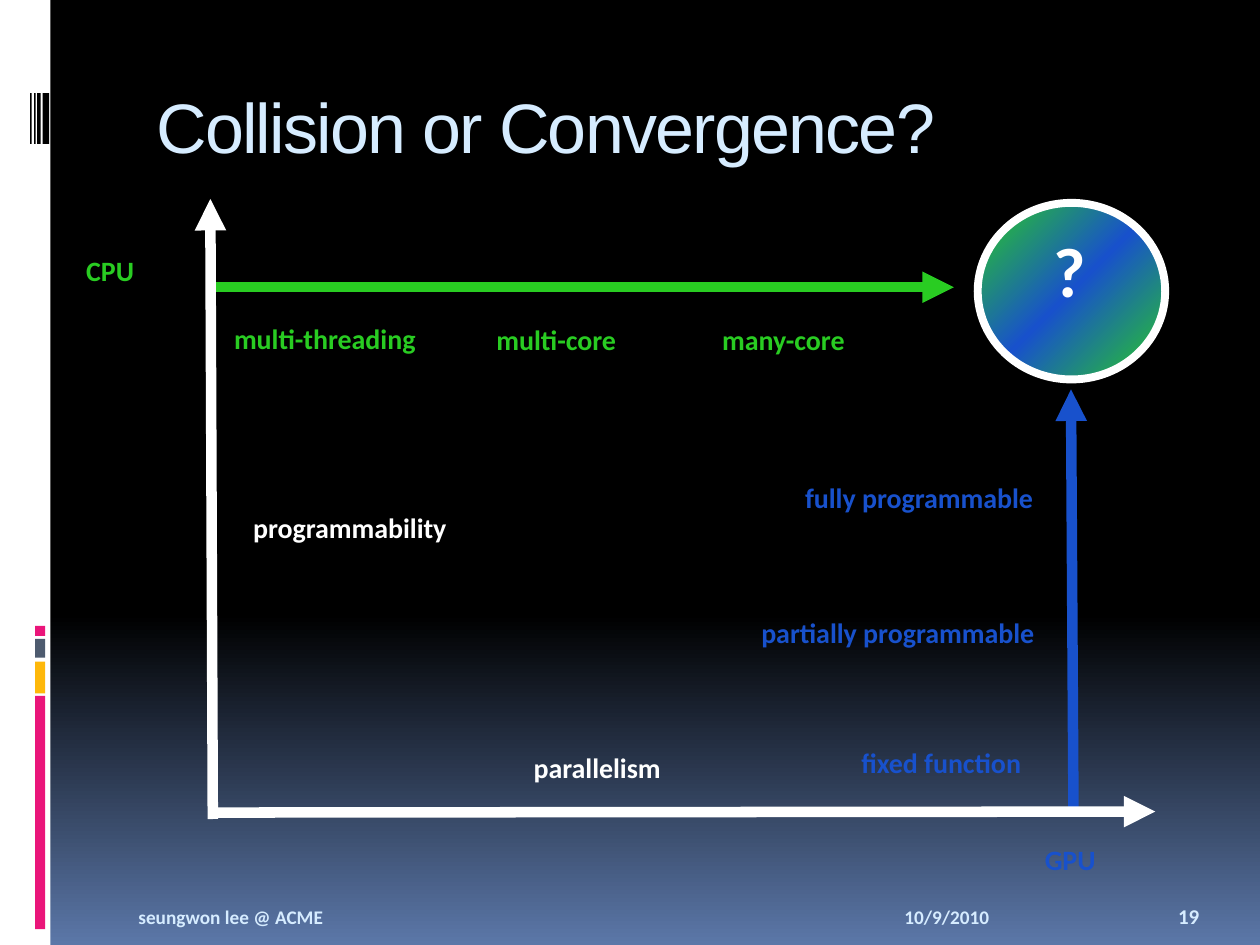
from lxml import etree
from pptx import Presentation
from pptx.dml.color import RGBColor
from pptx.enum import shapes, text
from pptx.oxml import ns
from pptx.util import Cm, Pt

WHITE = RGBColor(0xFF, 0xFF, 0xFF)
BLACK = RGBColor(0, 0, 0)
GREEN = RGBColor(0x29, 0xCC, 0x22)
BLUE = RGBColor(0x18, 0x51, 0xCC)
PALE = RGBColor(0xD6, 0xEC, 0xFF)
STEEL = RGBColor(0x5B, 0x77, 0xA8)
PINK = RGBColor(0xEA, 0x15, 0x7A)
GOLD = RGBColor(0xFE, 0xB8, 0x0A)
SLATE = RGBColor(0x4E, 0x5B, 0x6F)

# Lengths are in cm.
TITLE = " Collision or Convergence?"
STRIP = (0, 0, 1.02, 19.05, WHITE)
BLOCKS = [(12.62, 0.2, PINK), (12.88, 0.38, SLATE),
          (13.34, 0.64, GOLD), (14.03, 4.7, PINK)]  # top, height, colour
CODE = [(0.61, 0.03), (0.69, 0.03), (0.75, 0.07), (0.86, 0.13)]  # left, width
ARROWS = [  # start, end, colour
    ((4.24, 5.79), (19.23, 5.79), GREEN),
    ((4.29, 16.51), (4.24, 4.01), WHITE),
    ((21.64, 16.36), (21.59, 7.85), BLUE),
    ((4.39, 16.38), (23.29, 16.36), WHITE),
]
GOAL = (19.71, 4.09, 3.78, 3.56)
LABELS = [  # text, left, top, width, colour
    ("CPU", 1.42, 5.11, 1.6, GREEN),
    ("multi-threading", 4.34, 6.48, 4.42, GREEN),
    ("multi-core", 9.68, 6.5, 3.07, GREEN),
    ("many-core", 14.22, 6.5, 3.15, GREEN),
    ("fully programmable", 15.85, 9.7, 5.36, BLUE),
    ("partially programmable", 14.94, 12.42, 6.32, BLUE),
    ("fixed function", 17.02, 15.04, 3.91, BLUE),
    ("GPU", 20.75, 17, 1.65, BLUE),
    ("programmability", 4.72, 10.29, 4.67, WHITE),
    ("parallelism", 10.44, 15.14, 3.2, WHITE),
]
FOOT = [  # text, left, width, size
    ("seungwon lee @ ACME", 2.54, 15.44, 11),
    ("10/9/2010", 17.98, 5.92, 11),
    ("19", 23.5, 1.7, 12),
]


def blend(fill, root, stops, angle):
    """Fill with a linear gradient of (percent, colour) stops."""
    fill.gradient()
    grad = root.find(".//" + ns.qn("a:gradFill"))
    for child in list(grad):
        grad.remove(child)
    row = etree.SubElement(grad, ns.qn("a:gsLst"))
    for pos, tone in stops:
        stop = etree.SubElement(row, ns.qn("a:gs"), pos=str(pos * 1000))
        etree.SubElement(stop, ns.qn("a:srgbClr"), val=str(tone))
    etree.SubElement(grad, ns.qn("a:lin"), ang=str(angle * 60000), scaled="0")


def add_bar(slide, x, y, w, h, tone):
    bar = slide.shapes.add_shape(shapes.MSO_SHAPE.RECTANGLE,
                                 Cm(x), Cm(y), Cm(w), Cm(h))
    bar.shadow.inherit = False
    bar.fill.solid()
    bar.fill.fore_color.rgb = tone
    bar.line.fill.background()


def add_arrow(slide, start, end, tone):
    arrow = slide.shapes.add_connector(shapes.MSO_CONNECTOR.STRAIGHT,
                                       *map(Cm, start + end))
    arrow.line.color.rgb = tone
    arrow.line.width = Pt(6)
    etree.SubElement(arrow.line._get_or_add_ln(), ns.qn("a:tailEnd"),
                     type="triangle")
    etree.SubElement(arrow._element.spPr, ns.qn("a:effectLst"))


def style(par, size, tone, face="Calibri", bold=True):
    par.font.size = Pt(size)
    par.font.name = face
    par.font.bold = bold
    par.font.color.rgb = tone


def add_text(slide, words, x, y, w, h, size, tone):
    frame = slide.shapes.add_textbox(Cm(x), Cm(y), Cm(w), Cm(h)).text_frame
    frame.text = words
    style(frame.paragraphs[0], size, tone)
    return frame


def add_label(slide, words, x, y, w, tone, h=0.81, size=16):
    frame = add_text(slide, words, x, y, w, h, size, tone)
    frame.word_wrap = False
    frame.auto_size = text.MSO_AUTO_SIZE.SHAPE_TO_FIT_TEXT
    frame.paragraphs[0].alignment = text.PP_ALIGN.CENTER
    frame.paragraphs[0].line_spacing = 0.8


def set_title(slide):
    title = slide.shapes.title
    title.left, title.top, title.width, title.height = map(
        Cm, (2.54, 1.42, 21.59, 2.54))
    frame = title.text_frame
    frame.text = TITLE
    frame.vertical_anchor = text.MSO_ANCHOR.TOP
    frame.margin_top = Cm(0.27)
    par = frame.paragraphs[0]
    par.alignment = text.PP_ALIGN.LEFT
    style(par, 40, PALE, "Arial", False)
    par.runs[0].font._element.set("spc", "-100")


def add_goal(slide):
    goal = slide.shapes.add_shape(shapes.MSO_SHAPE.OVAL, *map(Cm, GOAL))
    goal.shadow.inherit = False
    blend(goal.fill, goal._element.spPr,
          [(0, GREEN), (50, BLUE), (100, GREEN)], 45)
    goal.line.color.rgb = WHITE
    goal.line.width = Pt(4.5)
    add_label(slide, "?", 20.98, 4.78, 1.14, WHITE, 1.63, 40)


def main():
    deck = Presentation()
    deck.slide_width, deck.slide_height = Cm(25.4), Cm(19.05)
    slide = deck.slides.add_slide(deck.slide_layouts[5])
    blend(slide.background.fill, slide.element,
          [(0, BLACK), (65, BLACK), (100, STEEL)], 90)
    add_bar(slide, *STRIP)
    for y, h, tone in BLOCKS:
        add_bar(slide, 0.71, y, 0.2, h, tone)
    for x, w in CODE:
        add_bar(slide, x, 1.88, w, 1.02, BLACK)
    set_title(slide)
    for arrow in ARROWS:
        add_arrow(slide, *arrow)
    add_goal(slide)
    for label in LABELS:
        add_label(slide, *label)
    for words, x, w, size in FOOT:
        frame = add_text(slide, words, x, 17.83, w, 1.02, size, PALE)
        frame.word_wrap = True
        frame.vertical_anchor = text.MSO_ANCHOR.BOTTOM
    deck.save("out.pptx")


if __name__ == "__main__":
    main()
